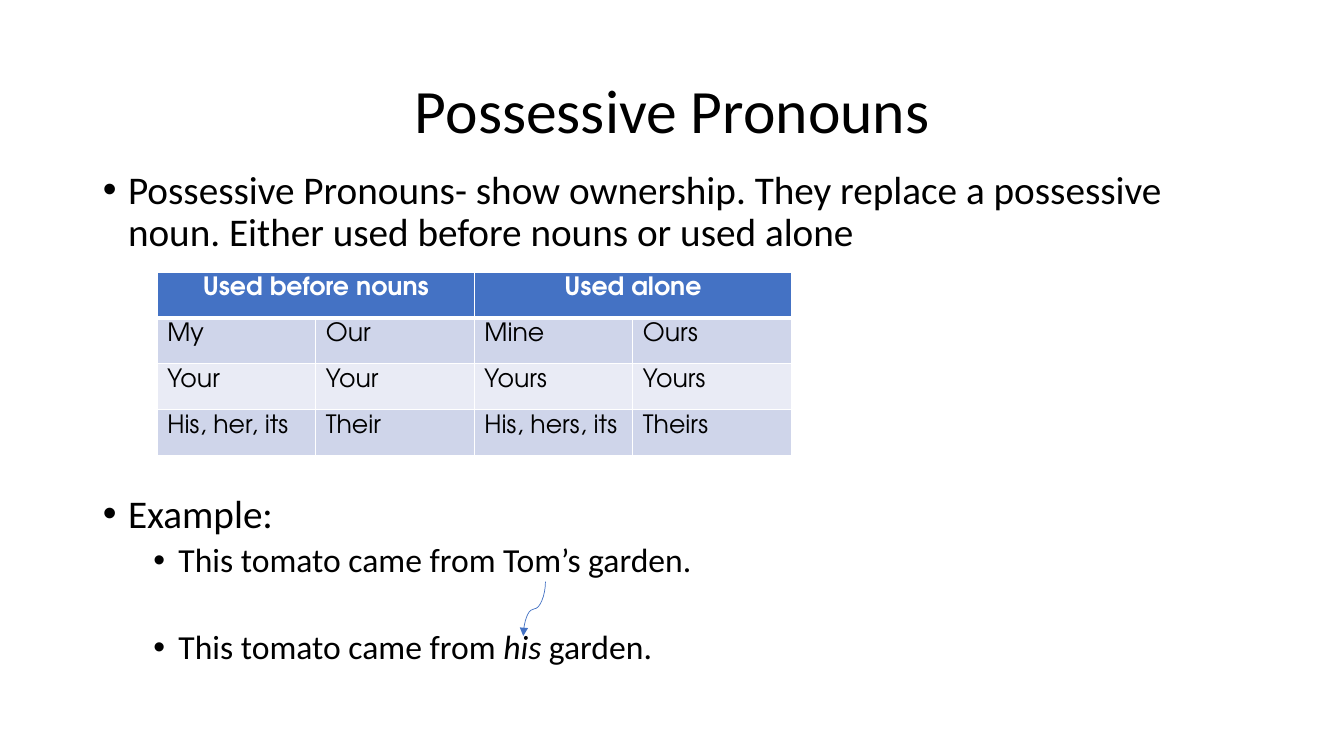
from lxml import etree
from pptx import Presentation
from pptx.dml.color import RGBColor
from pptx.enum.shapes import MSO_CONNECTOR
from pptx.enum.text import MSO_ANCHOR, MSO_AUTO_SIZE, PP_ALIGN
from pptx.oxml.ns import qn
from pptx.util import Inches, Pt

CURVE = MSO_CONNECTOR.CURVE
MIDDLE, TOP = MSO_ANCHOR.MIDDLE, MSO_ANCHOR.TOP
NO_AUTOFIT = MSO_AUTO_SIZE.NONE
CENTER, LEFT = PP_ALIGN.CENTER, PP_ALIGN.LEFT

BODY_FONT, TABLE_FONT = "Calibri", "TeX Gyre Adventor"
BLACK, WHITE, BLUE = "000000", "FFFFFF", "4472C4"
BANDS = ["CFD5EA", "E9EBF5"]

HEADINGS = ["Used before nouns", "Used alone"]
PRONOUNS = [
    ["My", "Our", "Mine", "Ours"],
    ["Your", "Your", "Yours", "Yours"],
    ["His, her, its", "Their", "His, hers, its", "Theirs"],
]
BULLETS = [
    (0, 28, 10, ["Possessive Pronouns- show ownership. They replace a possessive noun. "
                 "Either used before nouns or used alone"]),
    (0, 28, 171, ["Example:"]),
    (1, 24, 5, ["This tomato came from Tom’s garden."]),
    (1, 24, 36, ["This tomato came from ", "his", " garden."]),
]


def color(value):
    """Turn a hex string into a colour."""
    return RGBColor.from_string(value)


def add_run(paragraph, text, size, font=BODY_FONT, fill=BLACK, bold=False, italic=False):
    """Append one formatted run to a paragraph."""
    run = paragraph.add_run()
    run.text = text
    run.font.size = Pt(size)
    run.font.name = font
    run.font.bold = bold
    run.font.italic = italic
    run.font.color.rgb = color(fill)


def place(shape, left, top, width, height, anchor):
    """Move a placeholder into its box and return its text frame."""
    shape.left, shape.top = Inches(left), Inches(top)
    shape.width, shape.height = Inches(width), Inches(height)
    frame = shape.text_frame
    frame.word_wrap = True
    frame.auto_size = NO_AUTOFIT
    frame.vertical_anchor = anchor
    return frame


def add_title(slide, left, top, width, height):
    """Fill the title placeholder."""
    frame = place(slide.shapes.title, left, top, width, height, MIDDLE)
    paragraph = frame.paragraphs[0]
    paragraph.alignment = CENTER
    paragraph.line_spacing = 0.9
    add_run(paragraph, "Possessive Pronouns", 44)


def add_body(slide, left, top, width, height):
    """Fill the body placeholder with the two-level list."""
    frame = place(slide.placeholders[1], left, top, width, height, TOP)
    for index, (level, size, space, texts) in enumerate(BULLETS):
        paragraph = frame.add_paragraph() if index else frame.paragraphs[0]
        paragraph.level = level
        paragraph.alignment = LEFT
        paragraph.line_spacing = 0.9
        paragraph.space_before = Pt(space)
        properties = paragraph._p.get_or_add_pPr()
        properties.set("marL", str(Inches(0.25 + 0.5 * level)))
        properties.set("indent", str(Inches(-0.25)))
        etree.SubElement(properties, qn("a:buFont")).set("typeface", "Arial")
        etree.SubElement(properties, qn("a:buChar")).set("char", "•")
        for text in texts:
            add_run(paragraph, text, size, italic=text == "his")


def add_arrow(slide, start_x, start_y, end_x, end_y):
    """Draw a curved arrow that leaves and arrives vertically."""
    center_x, center_y = (start_x + end_x) / 2, (start_y + end_y) / 2
    half_width, half_height = (end_y - start_y) / 2, (start_x - end_x) / 2
    connector = slide.shapes.add_connector(
        CURVE,
        Inches(center_x - half_width), Inches(center_y - half_height),
        Inches(center_x + half_width), Inches(center_y + half_height))
    connector.line.color.rgb = color(BLUE)
    connector.line.width = Pt(0.5)
    properties = connector._element.spPr
    properties.find(qn("a:xfrm")).set("rot", str(90 * 60000))
    etree.SubElement(properties.find(qn("a:ln")), qn("a:tailEnd")).set("type", "triangle")
    etree.SubElement(properties, qn("a:effectLst"))


def format_cell(cell, fill, top_width, bottom_width):
    """Give a cell white borders, a fill and margins."""
    properties = cell._tc.get_or_add_tcPr()
    for side, width in (("L", 1), ("R", 1), ("T", top_width), ("B", bottom_width)):
        line = etree.SubElement(properties, qn("a:ln" + side), w=str(Pt(width)))
        solid = etree.SubElement(line, qn("a:solidFill"))
        etree.SubElement(solid, qn("a:srgbClr")).set("val", WHITE)
    cell.fill.solid()
    cell.fill.fore_color.rgb = color(fill)
    cell.margin_left = cell.margin_right = Inches(0.1)
    cell.margin_top = cell.margin_bottom = Inches(0.05)


def add_pronoun_table(slide, left, top, width, height):
    """Build the pronoun table with two merged headings."""
    rows, columns = len(PRONOUNS) + 1, len(PRONOUNS[0])
    table = slide.shapes.add_table(
        rows, columns, Inches(left), Inches(top), Inches(width), Inches(height)).table
    for column in range(columns):
        format_cell(table.cell(0, column), BLUE, 1, 3)
    for index, heading in enumerate(HEADINGS):
        cell = table.cell(0, 2 * index)
        cell.merge(table.cell(0, 2 * index + 1))
        paragraph = cell.text_frame.paragraphs[0]
        paragraph.alignment = CENTER
        add_run(paragraph, heading, 18, TABLE_FONT, WHITE, bold=True)
    for row, words in enumerate(PRONOUNS, 1):
        for column, word in enumerate(words):
            cell = table.cell(row, column)
            format_cell(cell, BANDS[(row - 1) % 2], 3 if row == 1 else 1, 1)
            add_run(cell.text_frame.paragraphs[0], word, 18, TABLE_FONT)


def main():
    """Build and save the slide."""
    presentation = Presentation()
    presentation.slide_width = Inches(13.33)
    presentation.slide_height = Inches(7.5)
    slide = presentation.slides.add_slide(presentation.slide_layouts[1])
    add_title(slide, 0.92, 0.4, 11.5, 1.45)
    add_body(slide, 0.92, 1.64, 11.5, 5.11)
    add_arrow(slide, 5.41, 5.77, 5.19, 6.31)
    add_pronoun_table(slide, 1.56, 2.7, 6.29, 1.82)
    presentation.save("out.pptx")


if __name__ == "__main__":
    main()
